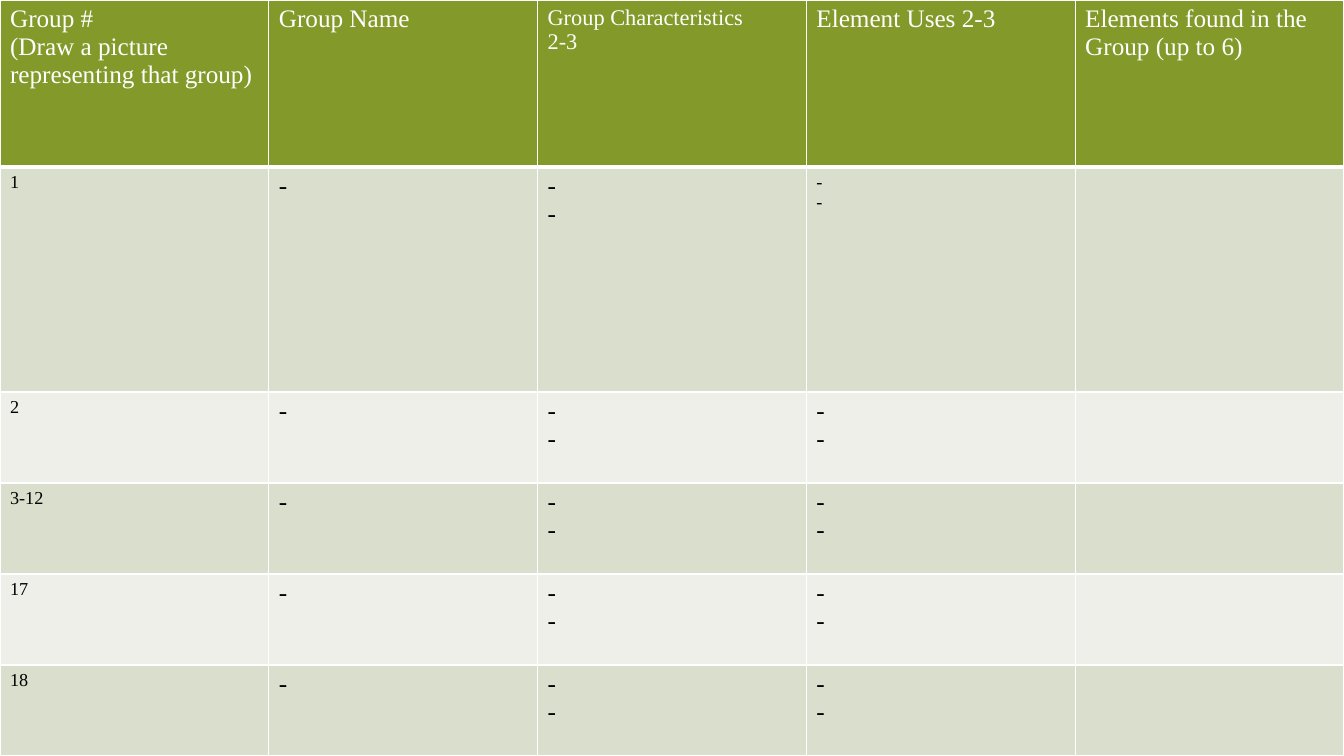
from dataclasses import dataclass

from lxml import etree
from pptx import Presentation
from pptx import util as u
from pptx.dml.color import RGBColor
from pptx.oxml.ns import qn


@dataclass(frozen=True)
class Theme:
    font: str = "Times New Roman"
    header_fill: str = "83992A"
    bands: tuple = ("D9DECD", "EDEFE8")
    header_text: str = "FFFFFF"
    body_text: str = "000000"
    border: str = "FFFFFF"
    large: int = 18
    medium: int = 16
    small: int = 13
    thin: int = 1
    thick: int = 3


class SlideBuilder:
    def __init__(self, slide, theme):
        self.slide = slide
        self.theme = theme

    def table(self, width, column_count, row_heights):
        frame = self.slide.shapes.add_table(
            len(row_heights), column_count, 0, 0,
            u.Inches(width), u.Inches(sum(row_heights)))
        for column in frame.table.columns:
            column.width = u.Inches(width / column_count)
        for row, height in zip(frame.table.rows, row_heights):
            row.height = u.Inches(height)
        return frame.table

    def cell(self, cell, lines, size, fill, color, bottom):
        self.borders(cell, bottom)
        cell.fill.solid()
        cell.fill.fore_color.rgb = RGBColor.from_string(fill)
        cell.text = "\n".join(lines)
        for paragraph in cell.text_frame.paragraphs:
            font = paragraph.font
            font.name = self.theme.font
            font.size = u.Pt(size)
            font.bold = False
            font.color.rgb = RGBColor.from_string(color)

    def borders(self, cell, bottom):
        properties = cell._tc.get_or_add_tcPr()
        for side in ("L", "R", "T", "B"):
            weight = bottom if side == "B" else self.theme.thin
            line = etree.SubElement(properties, qn(f"a:ln{side}"), w=str(u.Pt(weight)))
            solid = etree.SubElement(line, qn("a:solidFill"))
            etree.SubElement(solid, qn("a:srgbClr"), val=self.theme.border)


def main():
    theme = Theme()
    width, height = 13.33, 7.5
    presentation = Presentation()
    presentation.slide_width = u.Inches(width)
    presentation.slide_height = u.Inches(height)
    slide = presentation.slides.add_slide(presentation.slide_layouts[6])
    builder = SlideBuilder(slide, theme)

    # Content: header lines with sizes, then one row per group
    headers = [
        (["Group #", "(Draw a picture representing that group)"], theme.large),
        (["Group Name"], theme.large),
        (["Group Characteristics", "2-3"], theme.medium),
        (["Element Uses 2-3"], theme.large),
        (["Elements found in the Group (up to 6)"], theme.large),
    ]
    groups = ["1", "2", "3-12", "17", "18"]

    # Grid: the first group is tall, the others share the rest
    header_height, first_height = 1.66, 2.23
    other_count = len(groups) - 1
    other_height = (height - header_height - first_height) / other_count
    worksheet = builder.table(
        width, len(headers),
        [header_height, first_height] + [other_height] * other_count)

    # Header row
    for column, (lines, size) in enumerate(headers):
        builder.cell(worksheet.cell(0, column), lines, size,
                     theme.header_fill, theme.header_text, theme.thick)

    # Group rows with dashes to fill in
    for index, group in enumerate(groups):
        uses_size = theme.small if index == 0 else theme.large
        entries = [([group], theme.small), (["-"], theme.large),
                   (["-", "-"], theme.large), (["-", "-"], uses_size),
                   ([], theme.large)]
        for column, (lines, size) in enumerate(entries):
            builder.cell(worksheet.cell(index + 1, column), lines, size,
                         theme.bands[index % 2], theme.body_text, theme.thin)

    presentation.save("out.pptx")


if __name__ == "__main__":
    main()
